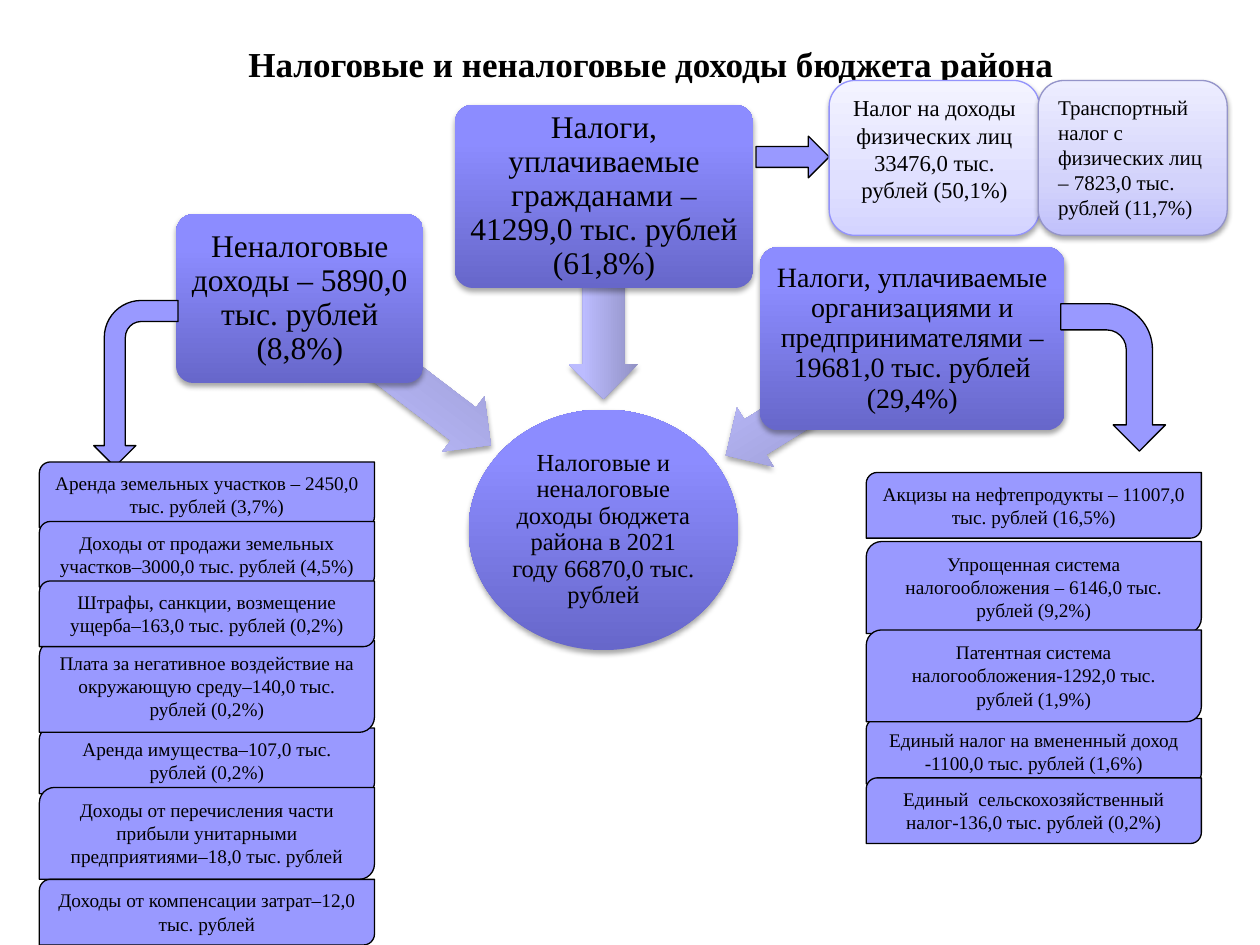
import copy

import pptx
import pptx.dml.color
import pptx.enum.dml
import pptx.enum.shapes
import pptx.enum.text
import pptx.oxml
import pptx.oxml.ns
import pptx.util

Pt = pptx.util.Pt
SHAPE = pptx.enum.shapes.MSO_SHAPE
ANCHOR = pptx.enum.text.MSO_ANCHOR
ALIGN = pptx.enum.text.PP_ALIGN

FONT = "Times New Roman"
COLORS = {"black": "000000", "lilac": "9999FF", "tax_line": "9393FC", "transport_line": "9494C9"}
GRADIENTS = {  # (position, colour) from bottom to top
    "block": [(0, "6767CA"), (0.8, "8C8CFF"), (1, "8E8EFF")],
    "arrow": [(0, "9191C4"), (0.8, "BCBCFF"), (1, "BEBEFF")],
    "tax": [(0, "D4D4FF"), (0.35, "E0E0FF"), (1, "F3F3FF")],
    "transport": [(0, "C1C1FB"), (0.35, "D3D3FB"), (1, "EDEDFF")],
}

TITLE = "Налоговые и неналоговые доходы бюджета района"
TOTAL = ("Налоговые и неналоговые доходы бюджета района в 2021 году 66870,0 тыс. рублей",
         (267.8, 234, 154.1, 137.5))

# text, box, font size, inset, arrow box, arrow rotation
SOURCES = [
    ("Неналоговые доходы – 5890,0 тыс. рублей (8,8%)",
     (100.8, 122.4, 141.1, 96.5), 18, 2.9, (157.7, 193, 136.8, 39.6), 217.3),
    ("Налоги, уплачиваемые гражданами – 41299,0 тыс. рублей (61,8%)",
     (259.9, 59.8, 170.6, 104.8), 18, 2.9, (287.3, 150.5, 115.2, 39.6), 270),
    ("Налоги, уплачиваемые организациями и предпринимателями – 19681,0 тыс. рублей (29,4%)",
     (434.2, 141.1, 174.2, 104.8), 16, 2.2, (405.4, 207.4, 125.3, 39.6), 328.2),
]

# text, left, width, font size, alignment, gradient, line colour
CITIZEN_TAXES = [
    ("Налог на доходы физических лиц 33476,0 тыс. рублей (50,1%)",
     473.8, 120.2, 13, ALIGN.CENTER, "tax", "tax_line"),
    ("Транспортный налог с физических лиц – 7823,0 тыс. рублей (11,7%)",
     593.3, 108, 12, ALIGN.LEFT, "transport", "transport_line"),
]

# preset, box, rotation, mirrored
DETAIL_ARROWS = [
    (SHAPE.BENT_ARROW, (594, 185.8, 84.2, 59.8), 90, False),
    (SHAPE.BENT_ARROW, (30.2, 195.1, 95, 48.2), 270, True),
    (SHAPE.RIGHT_ARROW, (432, 77.8, 41.8, 23.8), 0, False),
]

# left edge, then (top, number of lines, text) from back to front
DETAIL_WIDTH = 191.5
DETAIL_HEIGHTS = {2: 37.5, 3: 52.5}
DETAILS = [
    (495, [
        (270, 2, "Акцизы на нефтепродукты – 11007,0 тыс. рублей (16,5%)"),
        (309.5, 3, "Упрощенная система налогообложения – 6146,0 тыс. рублей (9,2%)"),
        (410.5, 2, "Единый налог на вмененный доход -1100,0 тыс. рублей (1,6%)"),
        (444.5, 2, "Единый  сельскохозяйственный налог-136,0 тыс. рублей (0,2%)"),
        (360, 3, "Патентная система налогообложения-1292,0 тыс. рублей (1,9%)"),
    ]),
    (22.5, [
        (264, 2, "Аренда земельных участков – 2450,0 тыс. рублей (3,7%)"),
        (416, 2, "Аренда имущества–107,0 тыс. рублей (0,2%)"),
        (366, 3, "Плата за негативное воздействие на окружающую среду–140,0 тыс. рублей (0,2%)"),
        (298, 2, "Доходы от продажи земельных участков–3000,0 тыс. рублей (4,5%)"),
        (332, 2, "Штрафы, санкции, возмещение ущерба–163,0 тыс. рублей (0,2%)"),
        (450, 3, "Доходы от перечисления части прибыли унитарными предприятиями–18,0 тыс. рублей"),
        (502.5, 2, "Доходы от компенсации затрат–12,0 тыс. рублей"),
    ]),
]


def rgb(name):
    return pptx.dml.color.RGBColor.from_string(COLORS.get(name, name))


def write_text(shape, text, size, bold=False, align=ALIGN.CENTER, anchor=ANCHOR.TOP,
               insets=(7.2, 3.6, 7.2, 3.6), spacing=None, grow=False):
    frame = shape.text_frame
    frame.word_wrap = True
    frame.auto_size = (pptx.enum.text.MSO_AUTO_SIZE.SHAPE_TO_FIT_TEXT if grow
                       else pptx.enum.text.MSO_AUTO_SIZE.NONE)
    frame.vertical_anchor = anchor
    (frame.margin_left, frame.margin_top,
     frame.margin_right, frame.margin_bottom) = map(Pt, insets)
    paragraph = frame.paragraphs[0]
    paragraph.alignment = align
    if spacing:
        paragraph.line_spacing = spacing
    run = paragraph.add_run()
    run.text = text
    run.font.name, run.font.size, run.font.bold = FONT, Pt(size), bold
    run.font.color.rgb = rgb("black")


def fill_gradient(shape, stops):
    shape.fill.gradient()
    shape.fill.gradient_angle = 90
    stop_list = shape._element.spPr.find(".//" + pptx.oxml.ns.qn("a:gsLst"))
    while len(stop_list) < len(stops):
        stop_list.append(copy.deepcopy(stop_list[0]))
    for stop, (position, color) in zip(shape.fill.gradient_stops, stops):
        stop.position = position
        stop.color.rgb = rgb(color)


def add_shadow(shape):
    effects = shape._element.spPr.find(pptx.oxml.ns.qn("a:effectLst"))
    effects.append(pptx.oxml.parse_xml(
        f'<a:outerShdw {pptx.oxml.ns.nsdecls("a")} blurRad="{Pt(3.1)}" dist="{Pt(1.8)}" '
        'dir="5400000" rotWithShape="0"><a:srgbClr val="000000">'
        '<a:alpha val="35000"/></a:srgbClr></a:outerShdw>'))


def add_figure(slide, preset, box, gradient=None, line=None, adjustments=(), rotation=0):
    """Add a preset shape: shaded with a shadow if a gradient is named, else plain lilac."""
    shape = slide.shapes.add_shape(preset, *map(Pt, box))
    shape.rotation = rotation
    for index, value in enumerate(adjustments):
        shape.adjustments[index] = value
    shape.shadow.inherit = False
    if gradient:
        fill_gradient(shape, GRADIENTS[gradient])
        add_shadow(shape)
    else:
        shape.fill.solid()
        shape.fill.fore_color.rgb = rgb("lilac")
    if line:
        shape.line.color.rgb = rgb(line)
        shape.line.width = Pt(0.75)
    else:
        shape.line.fill.background()
    return shape


def main():
    presentation = pptx.Presentation()
    presentation.slide_width, presentation.slide_height = Pt(720), Pt(540)
    slide = presentation.slides.add_slide(presentation.slide_layouts[6])

    title = slide.shapes.add_textbox(*map(Pt, (66, 18, 612, 27.5)))
    write_text(title, TITLE, 20, bold=True, insets=(7.2, 6.5, 7.2, 0))

    text, box = TOTAL
    total = add_figure(slide, SHAPE.OVAL, box, "block")
    write_text(total, text, 14, anchor=ANCHOR.MIDDLE, insets=[0.7] * 4, spacing=0.9)

    for text, box, size, inset, arrow_box, rotation in SOURCES:
        add_figure(slide, SHAPE.LEFT_ARROW, arrow_box, "arrow",
                   adjustments=(0.6, 0.5), rotation=rotation)
        block = add_figure(slide, SHAPE.ROUNDED_RECTANGLE, box, "block", adjustments=(0.1,))
        write_text(block, text, size, anchor=ANCHOR.MIDDLE, insets=[inset] * 4, spacing=0.9)

    for preset, box, rotation, mirrored in DETAIL_ARROWS:
        arrow = add_figure(slide, preset, box, line="black", rotation=rotation)
        if mirrored:
            arrow._element.spPr.xfrm.set("flipH", "1")

    for text, left, width, size, align, gradient, line in CITIZEN_TAXES:
        tax = add_figure(slide, SHAPE.ROUNDED_RECTANGLE, (left, 46, width, 88.5), gradient, line)
        write_text(tax, text, size, align=align, grow=True)

    for left, items in DETAILS:
        for top, lines, text in items:
            detail = add_figure(slide, SHAPE.ROUND_2_DIAG_RECTANGLE,
                                (left, top, DETAIL_WIDTH, DETAIL_HEIGHTS[lines]), line="black")
            write_text(detail, text, 11, grow=True)

    presentation.save("out.pptx")


if __name__ == "__main__":
    main()
